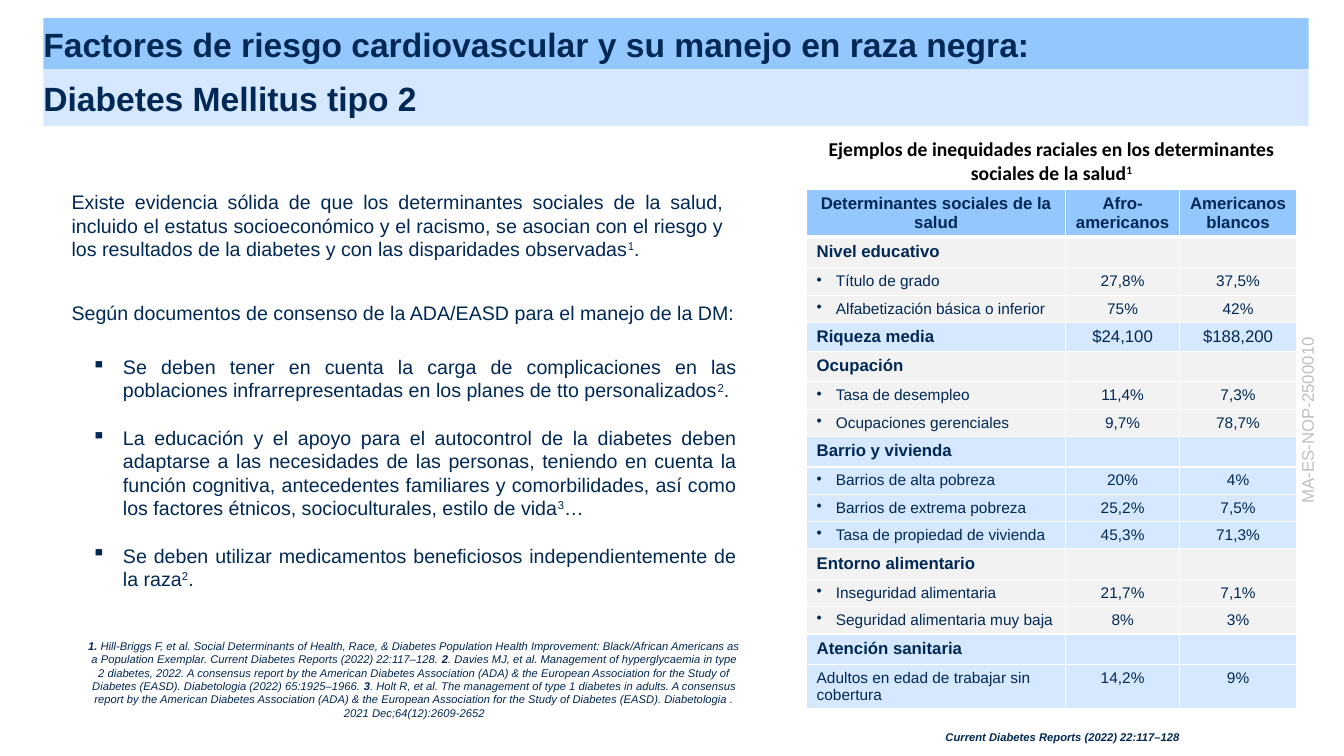
from dataclasses import dataclass

from pptx import Presentation
from pptx.dml.color import RGBColor as RGB
from pptx.enum.shapes import MSO_SHAPE as SHAPE
from pptx.enum.text import MSO_ANCHOR as ANCHOR, PP_ALIGN as ALIGN
from pptx.oxml.xmlchemy import OxmlElement as Element
from pptx.util import Inches, Pt


@dataclass(frozen=True)
class Theme:
    navy: str = "002855"
    blue: str = "95C7FF"
    pale: str = "D5E8FF"
    gray: str = "F2F2F2"
    code: str = "BFBFBF"
    white: str = "FFFFFF"
    black: str = "000000"
    font: str = "Arial"
    caption_font: str = "Calibri"
    title: int = 24
    body: int = 14
    head: int = 12
    item: int = 11
    note: int = 8


class Deck:
    def __init__(self, theme):
        self.t = theme
        self.prs = Presentation()
        self.prs.slide_width = Inches(13.33)
        self.prs.slide_height = Inches(7.5)
        self.s = self.prs.slides.add_slide(self.prs.slide_layouts[6])

    def runs(self, p, parts, size, color=None, font=None, bold=False, italic=False):
        for part in parts:
            text, mark = (part, "") if isinstance(part, str) else part
            r = p.add_run()
            r.text = text
            f = r.font
            f.name, f.size = font or self.t.font, Pt(size)
            f.bold, f.italic = bold or mark == "bold", italic
            f.color.rgb = RGB.from_string(color or self.t.navy)
            if mark == "sup":
                r._r.get_or_add_rPr().set("baseline", "30000")

    def bullet(self, p, char, indent):
        pPr = p._p.get_or_add_pPr()
        pPr.set("marL", str(Inches(indent)))
        pPr.set("indent", str(-Inches(indent)))
        bu = Element("a:buChar")
        bu.set("char", char)
        pPr.append(bu)

    def text(self, box, paras, size, align=ALIGN.LEFT, anchor=ANCHOR.TOP, fill=None,
             inset=True, bullet=None, gap=0, rotation=0, **style):
        at = [Inches(v) for v in box]
        if fill:
            sp = self.s.shapes.add_shape(SHAPE.RECTANGLE, *at)
            sp.shadow.inherit = False
            sp.fill.solid()
            sp.fill.fore_color.rgb = RGB.from_string(fill)
            sp.line.fill.background()
        else:
            sp = self.s.shapes.add_textbox(*at)
        sp.rotation = rotation
        tf = sp.text_frame
        tf.word_wrap = True
        tf.vertical_anchor = anchor
        if not inset:
            tf.margin_left = tf.margin_right = tf.margin_top = tf.margin_bottom = 0
        for i, parts in enumerate(paras):
            p = tf.paragraphs[0] if i == 0 else tf.add_paragraph()
            p.alignment = align
            if bullet:
                self.bullet(p, bullet, 0.31)
            if i:
                p.space_before = Pt(gap)
            self.runs(p, parts, size, **style)

    def cell(self, c, text, size, fill, bold=False, align=ALIGN.LEFT, bullet=False, bottom=1):
        p = c.text_frame.paragraphs[0]
        p.alignment = align
        if bullet:
            self.bullet(p, "•", 0.19)
        if text:
            self.runs(p, [text], size, bold=bold)
        else:
            end = Element("a:endParaRPr")
            end.set("sz", str(size * 100))
            p._p.append(end)
        tcPr = c._tc.get_or_add_tcPr()
        for side, width in (("L", 1), ("R", 1), ("T", 1), ("B", bottom)):
            ln, solid, clr = Element(f"a:ln{side}"), Element("a:solidFill"), Element("a:srgbClr")
            ln.set("w", str(Pt(width)))
            clr.set("val", self.t.white)
            solid.append(clr)
            ln.append(solid)
            tcPr.append(ln)
        c.fill.solid()
        c.fill.fore_color.rgb = RGB.from_string(fill)

    def table(self, box, widths, header, groups):
        t = self.t
        count = 1 + sum(1 + len(items) for _, items in groups)
        tbl = self.s.shapes.add_table(count, len(widths), *[Inches(v) for v in box]).table
        for col, width in zip(tbl.columns, widths):
            col.width = Inches(width)
        tbl.rows[0].height = Inches(0.45)
        for c, label in zip(tbl.rows[0].cells, header):
            self.cell(c, label, t.head, t.blue, True, ALIGN.CENTER, bottom=3)
            c.vertical_anchor = ANCHOR.MIDDLE
        row = 1
        for g, (section, items) in enumerate(groups):
            fill = t.pale if g % 2 else t.gray
            for k, (label, *values) in enumerate([section, *items]):
                size = t.item if k else t.head
                tbl.rows[row].height = Inches(0.25 if k else 0.27)
                bulleted = k > 0 and label != UNBULLETED
                self.cell(tbl.cell(row, 0), label, size, fill, k == 0, bullet=bulleted)
                for j, value in enumerate(values, 1):
                    self.cell(tbl.cell(row, j), value, size, fill, align=ALIGN.CENTER)
                row += 1


UNBULLETED = "Adultos en edad de trabajar sin cobertura"
HEADER = ["Determinantes sociales de la salud", "Afro-americanos", "Americanos blancos"]
GROUPS = [
    (("Nivel educativo", "", ""), [
        ("Título de grado", "27,8%", "37,5%"),
        ("Alfabetización básica o inferior", "75%", "42%")]),
    (("Riqueza media", "$24,100", "$188,200"), []),
    (("Ocupación", "", ""), [
        ("Tasa de desempleo", "11,4%", "7,3%"),
        ("Ocupaciones gerenciales", "9,7%", "78,7%")]),
    (("Barrio y vivienda", "", ""), [
        ("Barrios de alta pobreza", "20%", "4%"),
        ("Barrios de extrema pobreza", "25,2%", "7,5%"),
        ("Tasa de propiedad de vivienda", "45,3%", "71,3%")]),
    (("Entorno alimentario", "", ""), [
        ("Inseguridad alimentaria", "21,7%", "7,1%"),
        ("Seguridad alimentaria muy baja", "8%", "3%")]),
    (("Atención sanitaria", "", ""), [(UNBULLETED, "14,2%", "9%")]),
]
EVIDENCE = ["Existe evidencia sólida de que los determinantes sociales de la salud, incluido el estatus "
            "socioeconómico y el racismo, se asocian con el riesgo y los resultados de la diabetes y con "
            "las disparidades observadas", ("1", "sup"), "."]
ADVICE = [
    ["Se deben tener en cuenta la carga de complicaciones en las poblaciones infrarrepresentadas "
     "en los planes de tto personalizados", ("2", "sup"), "."],
    ["La educación y el apoyo para el autocontrol de la diabetes deben adaptarse a las necesidades "
     "de las personas, teniendo en cuenta la función cognitiva, antecedentes familiares y "
     "comorbilidades, así como los factores étnicos, socioculturales, estilo de vida",
     ("3", "sup"), "…"],
    ["Se deben utilizar medicamentos beneficiosos independientemente de la raza", ("2", "sup"), "."],
]
REFERENCES = [
    ("1. ", "bold"),
    "Hill‑Briggs F, et al. Social Determinants of Health, Race, & Diabetes Population Health "
    "Improvement: Black/African Americans as a Population Exemplar. Current Diabetes Reports (2022) "
    "22:117–128. ",
    ("2", "bold"),
    ". Davies MJ, et al. Management of hyperglycaemia in type 2 diabetes, 2022. A consensus report by "
    "the American Diabetes Association (ADA) & the European Association for the Study of Diabetes "
    "(EASD). Diabetologia (2022) 65:1925–1966. ",
    ("3", "bold"),
    ". Holt R, et al. The management of type 1 diabetes in adults. A consensus report by the American "
    "Diabetes Association (ADA) & the European Association for the Study of Diabetes (EASD). "
    "Diabetologia . 2021 Dec;64(12):2609-2652",
]


def main():
    t = Theme()
    d = Deck(t)
    titles = [
        (0.18, 0.51, t.blue, "Factores de riesgo cardiovascular y su manejo en raza negra:"),
        (0.69, 0.56, t.pale, "Diabetes Mellitus tipo 2"),
    ]
    for top, height, fill, title in titles:
        d.text((0.43, top, 12.55, height), [[title]], t.title, anchor=ANCHOR.MIDDLE,
               fill=fill, inset=False, bold=True)
    d.text((0.77, 6.29, 6.68, 0.91), [REFERENCES], t.note, ALIGN.CENTER, fill=t.white, italic=True)
    d.table((8, 1.88, 4.86, 5.32), [2.57, 1.13, 1.16], HEADER, GROUPS)
    d.text((8, 1.31, 4.86, 0.57),
           [["Ejemplos de inequidades raciales en los determinantes sociales de la salud", ("1", "sup")]],
           t.body, ALIGN.CENTER, color=t.black, font=t.caption_font, bold=True)
    d.text((0.71, 1.88, 6.47, 0.71), [EVIDENCE], t.body, ALIGN.JUSTIFY, ANCHOR.MIDDLE, inset=False)
    d.text((8.11, 7.2, 4.86, 0.24), [["Current Diabetes Reports (2022) 22:117–128"]], t.note,
           ALIGN.CENTER, fill=t.white, bold=True, italic=True)
    d.text((0.91, 3.52, 6.4, 2.36), ADVICE, t.body, ALIGN.JUSTIFY, inset=False, bullet="▪", gap=17)
    d.text((0.71, 2.98, 6.6, 0.24),
           [["Según documentos de consenso de la ADA/EASD para el manejo de la DM:"]],
           t.body, ALIGN.JUSTIFY, ANCHOR.MIDDLE, inset=False)
    d.text((11.58, 4.02, 2.77, 0.3), [["MA-ES-NOP-2500010"]], t.head, ALIGN.CENTER,
           rotation=270, color=t.code)
    d.prs.save("out.pptx")


if __name__ == "__main__":
    main()
